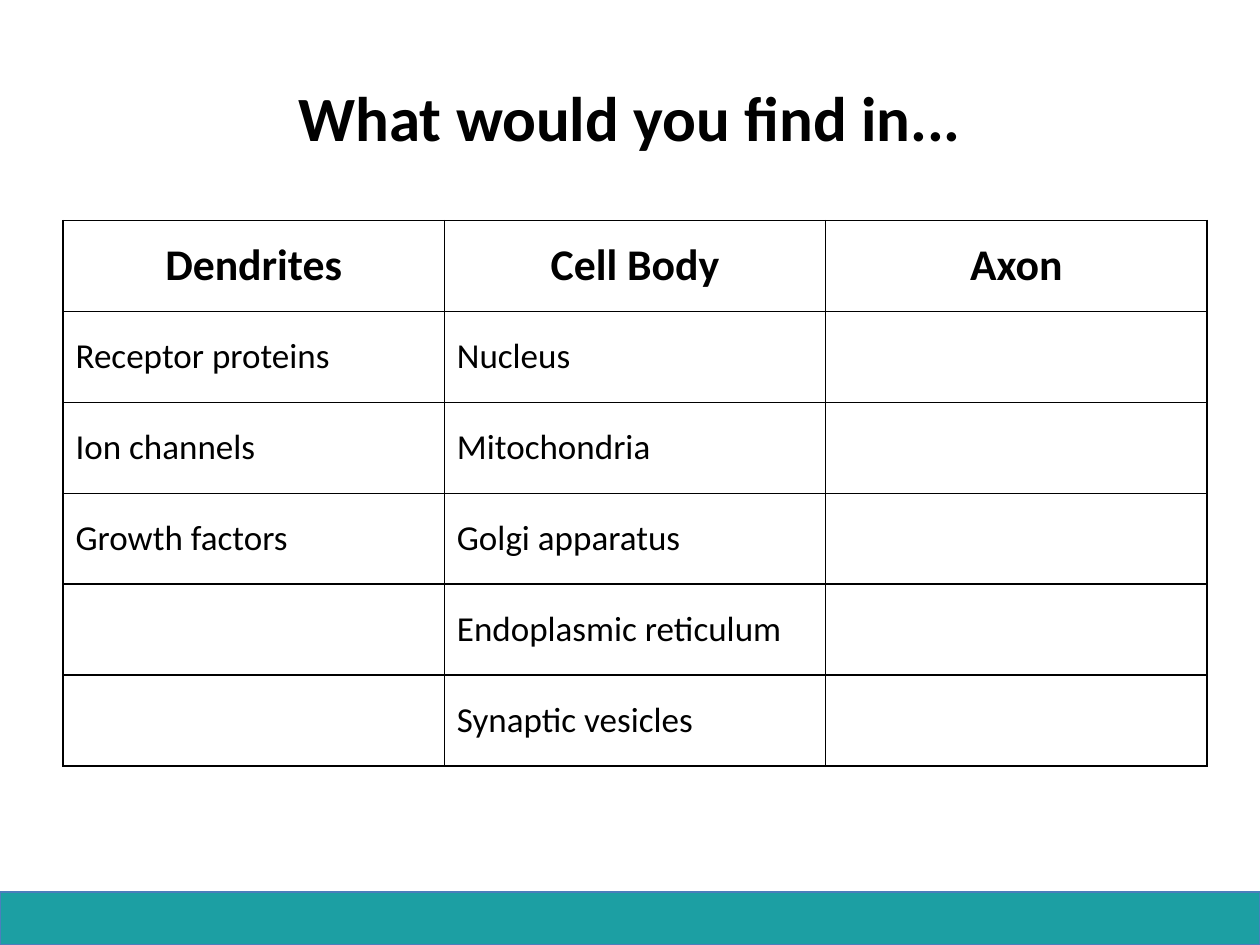
"""Build a slide with a table of what is found in each part of a neuron."""
from dataclasses import dataclass

from lxml import etree
from pptx import Presentation
from pptx import util as u
from pptx.dml.color import RGBColor
from pptx.enum import shapes, text
from pptx.oxml.ns import qn

COLORS = {"ink": "000000", "bar": "1C9FA3", "bar_line": "4B7EBC"}
FONT = "Calibri"
ROWS = 6


@dataclass
class Column:
    heading: str
    items: list[str]


COLUMNS = [
    Column("Dendrites", ["Receptor proteins", "Ion channels", "Growth factors"]),
    Column("Cell Body", ["Nucleus", "Mitochondria", "Golgi apparatus",
                         "Endoplasmic reticulum", "Synaptic vesicles"]),
    Column("Axon", []),
]


def rgb(name: str) -> RGBColor:
    return RGBColor.from_string(COLORS[name])


def write(tf, words: str, size: float, bold: bool, align) -> None:
    tf.text = words
    p = tf.paragraphs[0]
    p.alignment = align
    for font in [p.font] + [r.font for r in p.runs]:
        font.name, font.size, font.bold = FONT, u.Pt(size), bold
        font.color.rgb = rgb("ink")


def add_borders(cell) -> None:
    tc_pr = cell._tc.get_or_add_tcPr()
    for side in "LRTB":
        ln = etree.SubElement(tc_pr, qn(f"a:ln{side}"), w=str(u.Pt(1)))
        fill = etree.SubElement(ln, qn("a:solidFill"))
        etree.SubElement(fill, qn("a:srgbClr"), val=COLORS["ink"])


def fill_cell(cell, words: str, heading: bool) -> None:
    cell.vertical_anchor = text.MSO_ANCHOR.MIDDLE
    add_borders(cell)
    cell.fill.background()
    align = text.PP_ALIGN.CENTER if heading else text.PP_ALIGN.LEFT
    write(cell.text_frame, words, 25 if heading else 20, heading, align)


def add_bar(s) -> None:
    sp = s.shapes.add_shape(shapes.MSO_SHAPE.RECTANGLE, u.Inches(0),
                            u.Inches(7.08), u.Inches(10), u.Inches(0.42))
    sp.shadow.inherit = False
    sp.fill.solid()
    sp.fill.fore_color.rgb = rgb("bar")
    sp.line.color.rgb = rgb("bar_line")
    sp.line.width = u.Pt(0.75)


def add_title(s, words: str) -> None:
    sp = s.shapes.title
    sp.left, sp.top = u.Inches(0.5), u.Inches(0.3)
    sp.width, sp.height = u.Inches(9), u.Inches(1.25)
    tf = sp.text_frame
    write(tf, words, 36, True, text.PP_ALIGN.CENTER)
    tf.vertical_anchor = text.MSO_ANCHOR.MIDDLE


def add_columns(s, columns: list[Column]) -> None:
    table = s.shapes.add_table(ROWS, len(columns), u.Inches(0.5), u.Inches(1.75),
                               u.Inches(9.08), u.Inches(4.33)).table
    table.first_row = table.horz_banding = False
    for c, column in enumerate(columns):
        words = [column.heading] + column.items
        words += [""] * (ROWS - len(words))
        for r, entry in enumerate(words):
            fill_cell(table.cell(r, c), entry, r == 0)


def main() -> None:
    prs = Presentation()
    prs.slide_width, prs.slide_height = u.Inches(10), u.Inches(7.5)
    s = prs.slides.add_slide(prs.slide_layouts[5])
    add_bar(s)
    add_title(s, "What would you find in...")
    add_columns(s, COLUMNS)
    prs.save("out.pptx")


if __name__ == "__main__":
    main()
